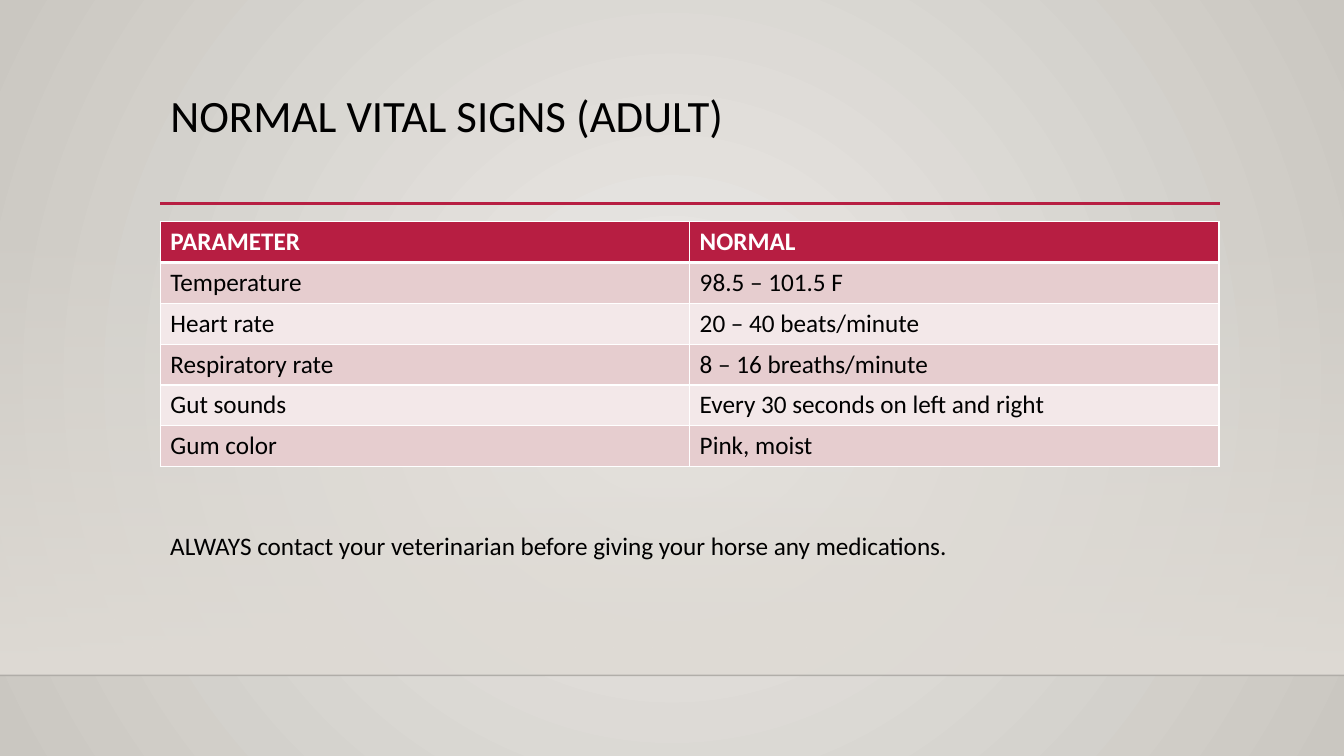
from lxml import etree
from pptx import Presentation
from pptx.dml.color import RGBColor
from pptx.enum import shapes, text
from pptx.oxml import parse_xml
from pptx.oxml.ns import nsdecls, qn
from pptx.util import Inches, Pt

TITLE = "NORMAL VITAL SIGNS (ADULT)"
ROWS = [
    ("PARAMETER", "NORMAL"),
    ("Temperature", "98.5 – 101.5 F"),
    ("Heart rate", "20 – 40 beats/minute"),
    ("Respiratory rate", "8 – 16 breaths/minute"),
    ("Gut sounds", "Every 30 seconds on left and right"),
    ("Gum color", "Pink, moist"),
]
NOTE = "ALWAYS contact your veterinarian before giving your horse any medications."

RED = RGBColor(0xB7, 0x1E, 0x42)
ROSE = RGBColor(0xE6, 0xCD, 0xCF)
PALE = RGBColor(0xF3, 0xE8, 0xE9)
SAND = RGBColor(0xDF, 0xDB, 0xD5)
LIGHT = RGBColor(0xEC, 0xEA, 0xE7)
DARK = RGBColor(0xCA, 0xC7, 0xC1)
WHITE = RGBColor(0xFF, 0xFF, 0xFF)
BLACK = RGBColor(0, 0, 0)

WIDE, HIGH = 13.33, 7.5
LEFT, WIDTH = 1.59, 10.5
ROW_H = 2.43 / len(ROWS)
BAND_TOP, FLOOR = 2.21, 6.7
BODY = dict(name="Calibri", size=Pt(18), bold=False)
HEAD = dict(BODY, bold=True)
LARGE = dict(BODY, size=Pt(32))
CIRCLE = ('<a:path path="circle"><a:fillToRect l="50000" t="50000" '
          'r="50000" b="50000"/></a:path>')
DOWN = '<a:lin ang="5400000" scaled="0"/>'


def box(left, top, width, height):
    return [Inches(v) for v in (left, top, width, height)]


def style(para, form, color):
    for key, value in form.items():
        setattr(para.font, key, value)
    para.font.color.rgb = color


def shade(root, stops, way):
    """Replace the gradient under root; stops are (percent, colour, opacity)."""
    marks = "".join(
        f'<a:gs pos="{pos * 1000}"><a:srgbClr val="{color}">'
        f'<a:alpha val="{alpha * 1000}"/></a:srgbClr></a:gs>'
        for pos, color, alpha in stops)
    old = root.find(".//" + qn("a:gradFill"))
    old.getparent().replace(old, parse_xml(
        f'<a:gradFill {nsdecls("a")} rotWithShape="1">'
        f'<a:gsLst>{marks}</a:gsLst>{way}</a:gradFill>'))


def rule(slide, left, right, top, color, width):
    line = slide.shapes.add_connector(
        shapes.MSO_CONNECTOR.STRAIGHT,
        *[Inches(v) for v in (left, top, right, top)])
    line.line.color.rgb = color
    line.line.width = Pt(width)
    etree.SubElement(line.element.spPr, qn("a:effectLst"))
    return line


def edge(cell, side, width):
    cell._tc.get_or_add_tcPr().append(parse_xml(
        f'<a:ln{side} {nsdecls("a")} w="{Pt(width)}"><a:solidFill>'
        f'<a:srgbClr val="{WHITE}"/></a:solidFill></a:ln{side}>'))


def fill_table(slide):
    table = slide.shapes.add_table(
        len(ROWS), 2, *box(LEFT, 2.2, WIDTH, ROW_H * len(ROWS))).table
    for r, row in enumerate(ROWS):
        for c, words in enumerate(row):
            cell = table.cell(r, c)
            cell.text = words
            style(cell.text_frame.paragraphs[0],
                  BODY if r else HEAD, BLACK if r else WHITE)
            for side in "LRTB":
                thick = (r, side) in ((0, "B"), (1, "T"))
                edge(cell, side, 3 if thick else 1)
            cell.fill.solid()
            cell.fill.fore_color.rgb = (ROSE if r % 2 else PALE) if r else RED


def main():
    deck = Presentation()
    deck.slide_width, deck.slide_height = Inches(WIDE), Inches(HIGH)
    slide = deck.slides.add_slide(deck.slide_layouts[5])
    slide.background.fill.gradient()
    shade(slide.element, [(0, LIGHT, 100), (100, DARK, 100)], CIRCLE)

    band = slide.shapes.add_shape(
        shapes.MSO_SHAPE.RECTANGLE, *box(0, BAND_TOP, WIDE, FLOOR - BAND_TOP))
    band.shadow.inherit = False
    band.line.fill.background()
    band.fill.gradient()
    shade(band.element, [(0, SAND, 0), (100, SAND, 100)], DOWN)

    floor = rule(slide, 0, WIDE, FLOOR, BLACK, 1)
    tint = floor.element.find(".//" + qn("a:srgbClr"))
    etree.SubElement(tint, qn("a:alpha"), val="20000")
    rule(slide, LEFT, 12.1, 2.02, RED, 2.5)

    title = slide.shapes.title
    title.left, title.top, title.width, title.height = box(
        LEFT, 0.88, WIDTH, 1.15)
    note = slide.shapes.add_textbox(*box(LEFT, 5.21, WIDTH, 0.4))
    for shape, words, form in ((title, TITLE, LARGE), (note, NOTE, BODY)):
        frame = shape.text_frame
        frame.text = words
        frame.word_wrap = True
        frame.vertical_anchor = text.MSO_ANCHOR.TOP
        para = frame.paragraphs[0]
        para.alignment = text.PP_ALIGN.LEFT
        style(para, form, BLACK)
    title.text_frame.paragraphs[0].line_spacing = 0.9

    fill_table(slide)
    deck.save("out.pptx")


if __name__ == "__main__":
    main()
